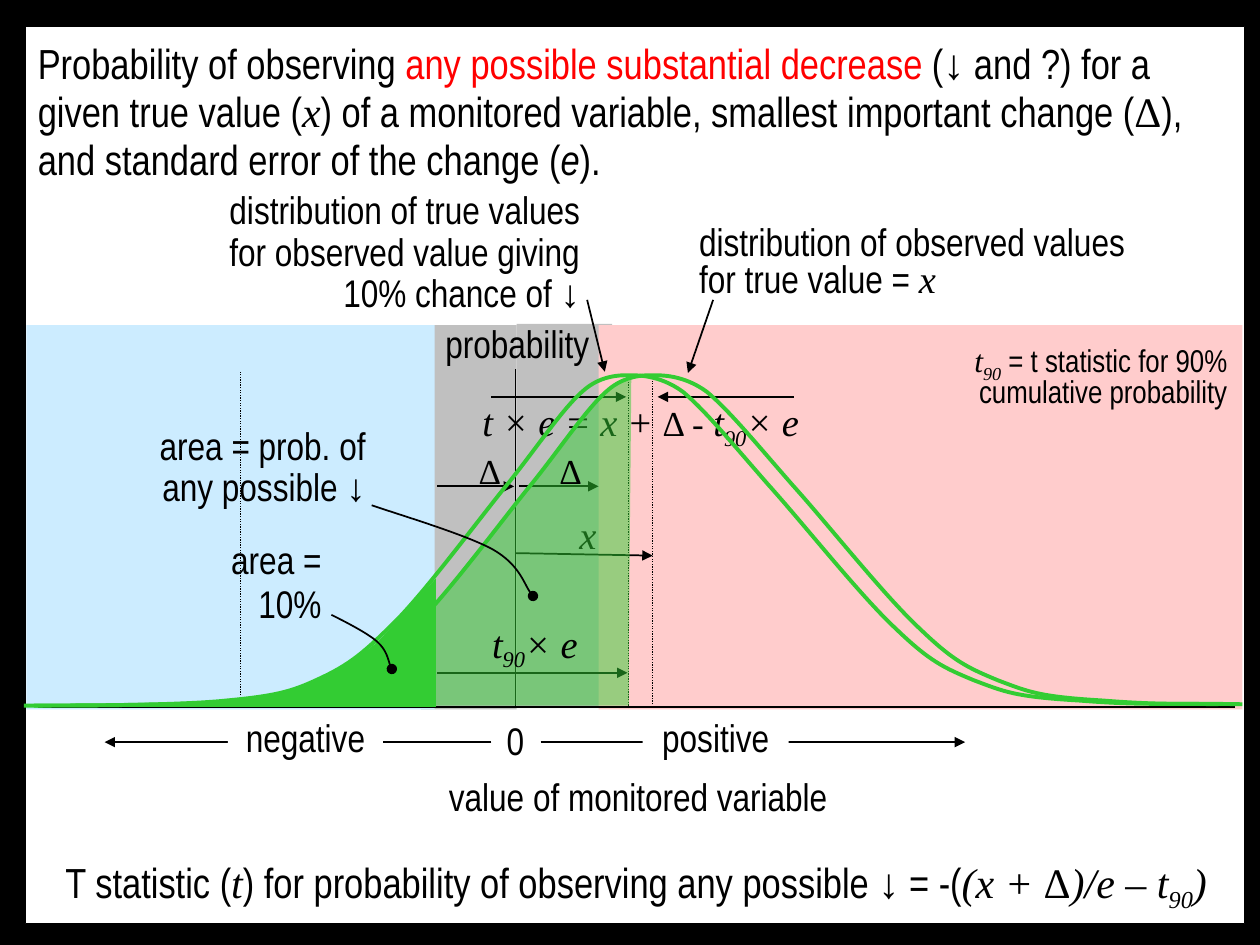
from lxml import etree
from pptx import Presentation
from pptx.dml.color import RGBColor
from pptx.enum import dml, shapes, text as t
from pptx.oxml.ns import qn
from pptx.util import Inches, Pt

COLORS = {"black": "000000", "white": "FFFFFF", "red": "FF0000", "grey": "C0C0C0",
          "blue": "CCECFF", "pink": "FFCCCC", "green": "33CC33"}
RGB = {name: RGBColor.from_string(value) for name, value in COLORS.items()}
LEFT, CENTER, RIGHT = t.PP_ALIGN.LEFT, t.PP_ALIGN.CENTER, t.PP_ALIGN.RIGHT
SQUARE, TRIANGLE = shapes.MSO_SHAPE.RECTANGLE, "triangle"

prs = Presentation()
prs.slide_width, prs.slide_height = Inches(10), Inches(7.5)
s = prs.slides.add_slide(prs.slide_layouts[1])
s.background.fill.solid()
s.background.fill.fore_color.rgb = RGB["black"]
s.shapes.title._element.getparent().remove(s.shapes.title._element)


def write(sp, runs, size=22, align=LEFT, spacing=0.8):
    """Fill a shape with (text, flags) runs; T Times, i italic, b subscript, r red, s 20 pt."""
    p = sp.text_frame.paragraphs[0]
    p.alignment, p.line_spacing = align, spacing
    for content, flags in runs:
        for i, row in enumerate(content.split("\n")):
            if i:
                p.add_line_break()
            r = p.add_run()
            r.text = row
            r.font.size = Pt(20 if "s" in flags else size)
            r.font.name = "Times New Roman" if "T" in flags else "Arial Narrow"
            r.font.italic = "i" in flags
            r.font.color.rgb = RGB["red" if "r" in flags else "black"]
            if "b" in flags:
                r.font._element.set("baseline", "-25000")


def label(box, runs, wrap=True, anchor=t.MSO_ANCHOR.TOP, **style):
    sp = s.shapes.add_textbox(*map(Inches, box))
    tf = sp.text_frame
    tf.word_wrap, tf.vertical_anchor = wrap, anchor
    tf.auto_size = t.MSO_AUTO_SIZE.SHAPE_TO_FIT_TEXT
    write(sp, runs, **style)
    return sp


# Statement on a white panel
panel = s.placeholders[1]
panel.left, panel.top, panel.width, panel.height = map(Inches, (0.2, 0.21, 9.68, 7.12))
panel.fill.solid()
panel.fill.fore_color.rgb = RGB["white"]
panel.line.color.rgb, panel.line.width = RGB["black"], Pt(0.75)
panel.text_frame.margin_top = Inches(0.12)
panel.text_frame.auto_size = t.MSO_AUTO_SIZE.NONE
write(panel, [("Probability of observing ", ""), ("any possible substantial decrease", "r"),
              (" (↓ and ?) for a given true value (", ""), ("x", "Ti"),
              (") of a monitored variable, smallest important change (", ""), ("Δ", "T"),
              ("), and standard error of the change (", ""), ("e", "i"), (").", "")],
      size=24, spacing=0.95)
p = panel.text_frame.paragraphs[0]
p.space_before = Pt(5)
pPr = p._p.get_or_add_pPr()
pPr.set("marL", "0")
pPr.set("indent", "0")
etree.SubElement(pPr, qn("a:buNone"))

# Zones: trivial, negative, positive
for x, y, w, color in [(3.34, 2.58, 0.76, "grey"), (4.1, 2.57, 0.76, "grey"),
                       (0.21, 2.58, 3.24, "blue"), (4.75, 2.58, 5.11, "pink")]:
    sp = s.shapes.add_shape(SQUARE, Inches(x), Inches(y), Inches(w), Inches(3.05))
    sp.shadow.inherit = False
    sp.fill.solid()
    sp.fill.fore_color.rgb = RGB[color]
    sp.line.fill.background()

# Straight lines: x1, y1, x2, y2, width, dotted, arrowhead
for x1, y1, x2, y2, width, dotted, tail in [
        (4.09, 2.93, 4.09, 5.6, 0.75, False, None),
        (0.3, 5.61, 9.8, 5.61, 1.5, False, None),
        (1.91, 5.6, 1.91, 2.95, 0.75, True, None),
        (4.99, 5.62, 4.99, 2.97, 0.75, True, None),
        (5.18, 5.61, 5.18, 2.97, 0.75, True, None),
        (4.29, 5.89, 7.66, 5.89, 0.75, False, TRIANGLE),
        (3.9, 5.89, 0.83, 5.89, 0.75, False, TRIANGLE),
        (4.09, 4.39, 5.18, 4.41, 1, False, TRIANGLE),
        (4.66, 2.38, 4.8, 2.95, 1, False, TRIANGLE),
        (5.66, 2.38, 5.46, 2.96, 1, False, TRIANGLE),
        (3.9, 3.15, 4.97, 3.15, 1, False, TRIANGLE),
        (6.3, 3.15, 5.22, 3.15, 1, False, TRIANGLE),
        (4.12, 3.86, 4.75, 3.86, 1, False, TRIANGLE),
        (3.47, 3.86, 4.08, 3.86, 1, False, TRIANGLE),
        (3.47, 5.34, 4.98, 5.34, 1, False, TRIANGLE)]:
    sp = s.shapes.add_connector(shapes.MSO_CONNECTOR.STRAIGHT, *map(Inches, (x1, y1, x2, y2)))
    sp.line.color.rgb, sp.line.width = RGB["black"], Pt(width)
    if dotted:
        sp.line.dash_style = dml.MSO_LINE.ROUND_DOT
    if tail:
        etree.SubElement(sp.line._get_or_add_ln(), qn("a:tailEnd")).set("type", tail)
    etree.SubElement(sp._element.spPr, qn("a:effectLst"))

# Axis labels, which interrupt the arrows
for x, y, w, word in [(5.1, 5.74, 1.16, "positive"), (1.81, 5.74, 1.23, "negative"),
                      (3.96, 5.76, 0.26, "0")]:
    sp = label((x, y, w, 0.3), [(word, "")], align=CENTER)
    sp.fill.solid()
    sp.fill.fore_color.rgb = RGB["white"]
    tf = sp.text_frame
    tf.margin_left = tf.margin_right = Inches(0.06)
    tf.margin_top = tf.margin_bottom = 0

BOTTOM = t.MSO_ANCHOR.BOTTOM
label((3.45, 6.16, 3.23, 0.4), [("value of monitored variable", "")], wrap=False, align=CENTER)
label((3.43, 2.56, 1.35, 0.4), [("probability", "")], wrap=False, align=CENTER)
label((5.45, 1.75, 3.76, 0.69),
      [("distribution of observed values for true value = ", ""), ("x", "Ti")])
label((1.42, 1.47, 3.28, 1.1),
      [("distribution of true values for observed value giving 10% chance of ↓", "")],
      align=RIGHT, spacing=0.9)
label((0.42, 6.79, 9.37, 0.42),
      [("T statistic (", ""), ("t", "Ti"),
       (") for probability of observing any possible ↓ = -(", ""), ("(x + ", "Ti"),
       ("Δ", "T"), (")/e – t", "Ti"), ("90", "Tib"), (")", "Ti")], wrap=False, size=24)
label((4.5, 4.07, 0.21, 0.4), [("x", "Ti")], anchor=BOTTOM, align=CENTER)
label((3.58, 3.18, 3.01, 0.4),
      [("t × e = x + ", "Ti"), ("Δ -", "Ts"), (" t", "Ti"), ("90", "Tib"), ("× e", "Ti")],
      anchor=BOTTOM, align=CENTER)

# Curves as a start point followed by Bézier triples
observed = [(0.19, 5.6), (0.49, 5.6), (1.56, 5.6), (1.99, 5.56), (2.42, 5.52), (2.53, 5.48),
            (2.76, 5.37), (2.99, 5.26), (3.11, 5.15), (3.35, 4.91), (3.59, 4.66), (3.94, 4.19),
            (4.18, 3.89), (4.42, 3.6), (4.64, 3.26), (4.81, 3.11), (4.97, 2.96), (5.16, 2.98),
            (5.2, 2.98), (5.23, 2.98), (5.42, 2.97), (5.61, 3.11), (5.79, 3.26), (6.01, 3.53),
            (6.29, 3.85), (6.57, 4.16), (7.02, 4.73), (7.3, 4.99), (7.57, 5.25), (7.68, 5.3),
            (7.92, 5.4), (8.16, 5.49), (8.24, 5.53), (8.75, 5.56), (9.26, 5.6), (9.4, 5.58),
            (9.86, 5.59)]
true_values = [(0.27, 5.6), (0.57, 5.6), (1.42, 5.6)] + [(x - 0.19, y) for x, y in observed[3:]]
foot, edge, bend = (3.46, 5.61), (3.46, 4.59), (3.07, 5.02)
tail_area = [foot, foot, edge, edge, edge, bend, bend, (2.92, 5.18), (2.83, 5.21), (2.72, 5.3),
             (2.53, 5.4), (2.4, 5.44), (2.16, 5.52), (1.64, 5.61), (1.37, 5.58), (0.86, 5.61)]
possible_area = observed[:13] + [(4.43, 3.6), (4.69, 3.21), (4.81, 3.11), (4.93, 3.02),
                                 (4.94, 3.02), (5.01, 3), (5, 4.3), (4.99, 4.73), (4.99, 5.6)]
possible_pointer = [(4.23, 4.73), (4.17, 4.67), (4.12, 4.48), (3.91, 4.36),
                    (3.69, 4.24), (3.15, 4.08), (2.95, 4.01)]
tail_pointer = [(3.11, 5.31), (3.09, 5.28), (3.07, 5.16), (2.99, 5.09),
                (2.91, 5.02), (2.71, 4.92), (2.63, 4.88)]

for points, fill, alpha, line, width in [
        (observed, None, None, "green", 2.25), (tail_area, "green", 100, None, 0),
        (true_values, None, None, "green", 2.25), (possible_area, "green", 50, None, 0),
        (possible_pointer, None, None, "black", 1), (tail_pointer, None, None, "black", 1)]:
    start, *rest = [(Inches(x), Inches(y)) for x, y in points]
    builder = s.shapes.build_freeform(*start)
    builder.add_line_segments(rest, close=False)
    sp = builder.convert_to_shape()
    sp.shadow.inherit = False
    outline = next(sp._element.iter(qn("a:path")))
    segments = outline.findall(qn("a:lnTo"))
    for i in range(0, len(segments), 3):
        bezier = etree.SubElement(outline, qn("a:cubicBezTo"))
        for segment in segments[i:i + 3]:
            bezier.append(segment[0])
            outline.remove(segment)
    if fill:
        sp.fill.solid()
        sp.fill.fore_color.rgb = RGB[fill]
        color = next(sp._element.spPr.iter(qn("a:srgbClr")))
        etree.SubElement(color, qn("a:alpha")).set("val", str(alpha * 1000))
        sp.line.fill.background()
    else:
        sp.fill.background()
        sp.line.color.rgb, sp.line.width = RGB[line], Pt(width)
    if line == "black":
        etree.SubElement(sp.line._get_or_add_ln(), qn("a:headEnd")).set("type", "oval")

# Labels on top of the areas
label((1.72, 4.23, 0.93, 0.81), [("area =\n10%", "")], wrap=False, align=RIGHT, spacing=0.95)
label((1.14, 3.34, 1.86, 0.77), [("area = prob. of\nany possible ↓", "")],
      wrap=False, align=RIGHT, spacing=0.9)
label((3.61, 4.94, 1.27, 0.4), [("t", "Ti"), ("90", "Tib"), ("× e", "Ti")],
      anchor=BOTTOM, align=CENTER)
for x in (4.34, 3.7):
    label((x, 3.58, 0.21, 0.37), [("Δ", "Ts")], anchor=BOTTOM, align=CENTER)
label((7.53, 2.69, 2.31, 0.59),
      [("t", "Ti"), ("90", "Tib"), (" = t statistic for 90%\ncumulative probability", "")],
      size=18, align=RIGHT)

prs.save("out.pptx")
